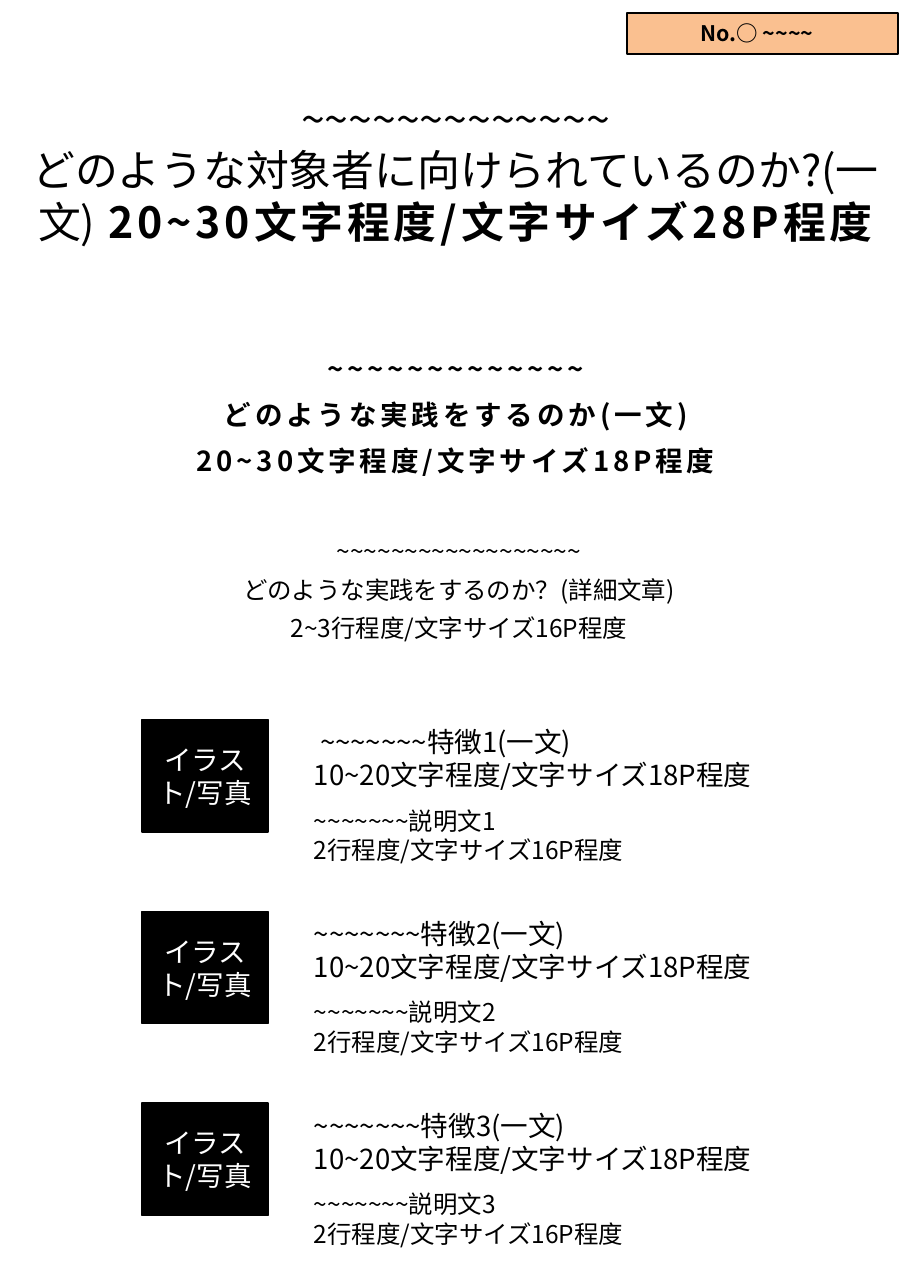
from lxml import etree
from pptx import Presentation
from pptx import util as u
from pptx.dml.color import RGBColor
from pptx.enum import shapes, text
from pptx.oxml import ns

FONT = "Noto Sans CJK JP"
BLACK = RGBColor(0x00, 0x00, 0x00)
WHITE = RGBColor(0xFF, 0xFF, 0xFF)
PEACH = RGBColor(0xFA, 0xC0, 0x90)
CENTER = text.PP_ALIGN.CENTER
LEFT = text.PP_ALIGN.LEFT

NUMBER = "No.○ ~~~~"
AUDIENCE = ["~~~~~~~~~~~~~", "どのような対象者に向けられているのか?(一文)"]
AUDIENCE_GUIDE = " 20~30文字程度/文字サイズ28P程度"
PRACTICE = [
    "~~~~~~~~~~~~~",
    "どのような実践をするのか(一文)",
    "20~30文字程度/文字サイズ18P程度",
]
DETAIL = [
    "~~~~~~~~~~~~~~~~~~",
    "どのような実践をするのか？(詳細文章)",
    "2~3行程度/文字サイズ16P程度",
]
ILLUSTRATION = "イラスト/写真"
FEATURES = [
    (" ~~~~~~~特徴1(一文)", "~~~~~~~説明文1"),
    ("~~~~~~~特徴2(一文)", "~~~~~~~説明文2"),
    ("~~~~~~~特徴3(一文)", "~~~~~~~説明文3"),
]
FEATURE_GUIDE = "10~20文字程度/文字サイズ18P程度"
DESCRIPTION_GUIDE = "2行程度/文字サイズ16P程度"

FEATURE_TOP, FEATURE_PITCH = 16.59, 4.42
DESCRIPTION_OFFSET = 1.86
ILLUSTRATION_LEFT, ILLUSTRATION_WIDTH, ILLUSTRATION_HEIGHT = 3.28, 2.9, 2.59
FEATURE_LEFT, FEATURE_WIDTH, FEATURE_HEIGHT = 6.99, 14, 1.8


def add_run(paragraph, content, size, color=BLACK, bold=False, spacing=0):
    run = paragraph.add_run()
    run.text = content
    run.font.name = FONT
    run.font.size = u.Pt(size)
    run.font.bold = bold
    run.font.color.rgb = color
    properties = run.font._element
    etree.SubElement(properties, ns.qn("a:ea")).set("typeface", FONT)
    if spacing:
        properties.set("spc", str(int(spacing * 100)))


def write(frame, lines, align=LEFT, line_spacing=None, before=0, **run_format):
    frame.word_wrap = True
    for index, line in enumerate(lines):
        paragraph = frame.add_paragraph() if index else frame.paragraphs[0]
        paragraph.alignment = align
        if line_spacing:
            paragraph.line_spacing = u.Pt(line_spacing)
        if index and before:
            paragraph.space_before = u.Pt(before)
        add_run(paragraph, line, **run_format)


def add_text(slide, box, lines, **text_format):
    shape = slide.shapes.add_textbox(*map(u.Cm, box))
    write(shape.text_frame, lines, **text_format)


def add_panel(slide, box, label, fill, line_width, **text_format):
    shape = slide.shapes.add_shape(shapes.MSO_SHAPE.RECTANGLE, *map(u.Cm, box))
    shape.shadow.inherit = False
    shape.fill.solid()
    shape.fill.fore_color.rgb = fill
    shape.line.color.rgb = BLACK
    shape.line.width = u.Pt(line_width)
    shape.text_frame.vertical_anchor = text.MSO_ANCHOR.MIDDLE
    write(shape.text_frame, [label], align=CENTER, **text_format)
    return shape


def add_title(slide):
    title = slide.shapes.title
    title.left, title.top, title.width, title.height = map(u.Cm, (0, 2, 21, 3.84))
    frame = title.text_frame
    frame.vertical_anchor = text.MSO_ANCHOR.TOP
    frame.auto_size = text.MSO_AUTO_SIZE.NONE
    write(frame, AUDIENCE, align=CENTER, size=28)
    add_run(frame.paragraphs[-1], AUDIENCE_GUIDE, size=28, bold=True, spacing=2.5)


def add_feature(slide, index, feature, description):
    top = FEATURE_TOP + index * FEATURE_PITCH
    add_panel(
        slide,
        (ILLUSTRATION_LEFT, top, ILLUSTRATION_WIDTH, ILLUSTRATION_HEIGHT),
        ILLUSTRATION, BLACK, 1, size=18, color=WHITE,
    )
    parts = [
        (0, [feature, FEATURE_GUIDE], 18),
        (DESCRIPTION_OFFSET, [description, DESCRIPTION_GUIDE], 16),
    ]
    for offset, lines, size in parts:
        box = (FEATURE_LEFT, top + offset, FEATURE_WIDTH, FEATURE_HEIGHT)
        add_text(slide, box, lines, size=size)


def main():
    presentation = Presentation()
    presentation.slide_width = u.Cm(20.98)
    presentation.slide_height = u.Cm(29.69)
    slide = presentation.slides.add_slide(presentation.slide_layouts[5])

    add_title(slide)
    number = add_panel(
        slide, (14.45, 0.3, 6.25, 0.94), NUMBER, PEACH, 1.5, size=14, bold=True
    )
    number.text_frame.margin_right = u.Cm(0.5)
    add_text(
        slide, (1.35, 7.7, 18.31, 3.45), PRACTICE,
        align=CENTER, line_spacing=30, size=18, bold=True, spacing=2.5,
    )
    add_text(
        slide, (0.89, 12.24, 19.38, 2.74), DETAIL, align=CENTER, before=6, size=16
    )
    for index, (feature, description) in enumerate(FEATURES):
        add_feature(slide, index, feature, description)

    presentation.save("out.pptx")


if __name__ == "__main__":
    main()
